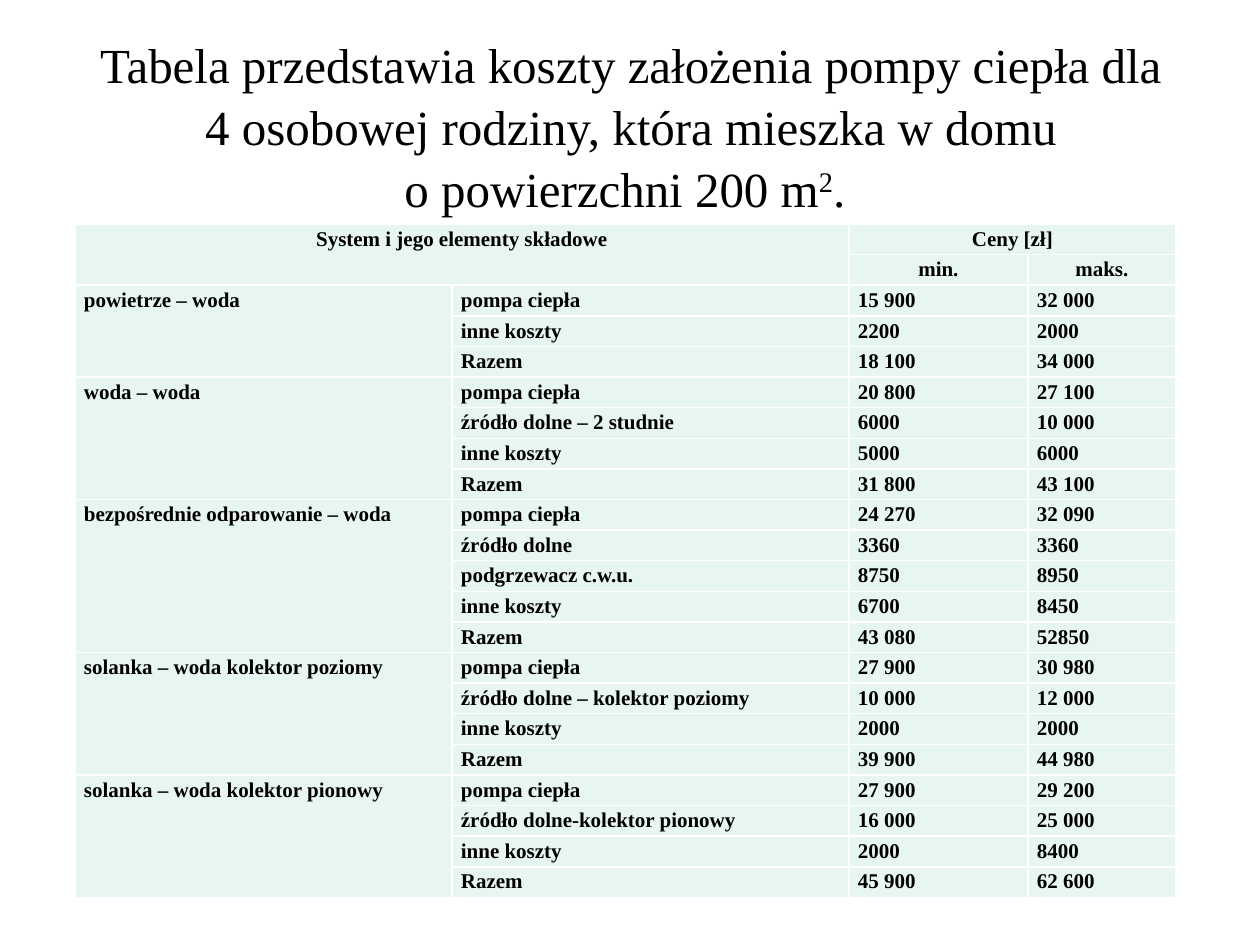
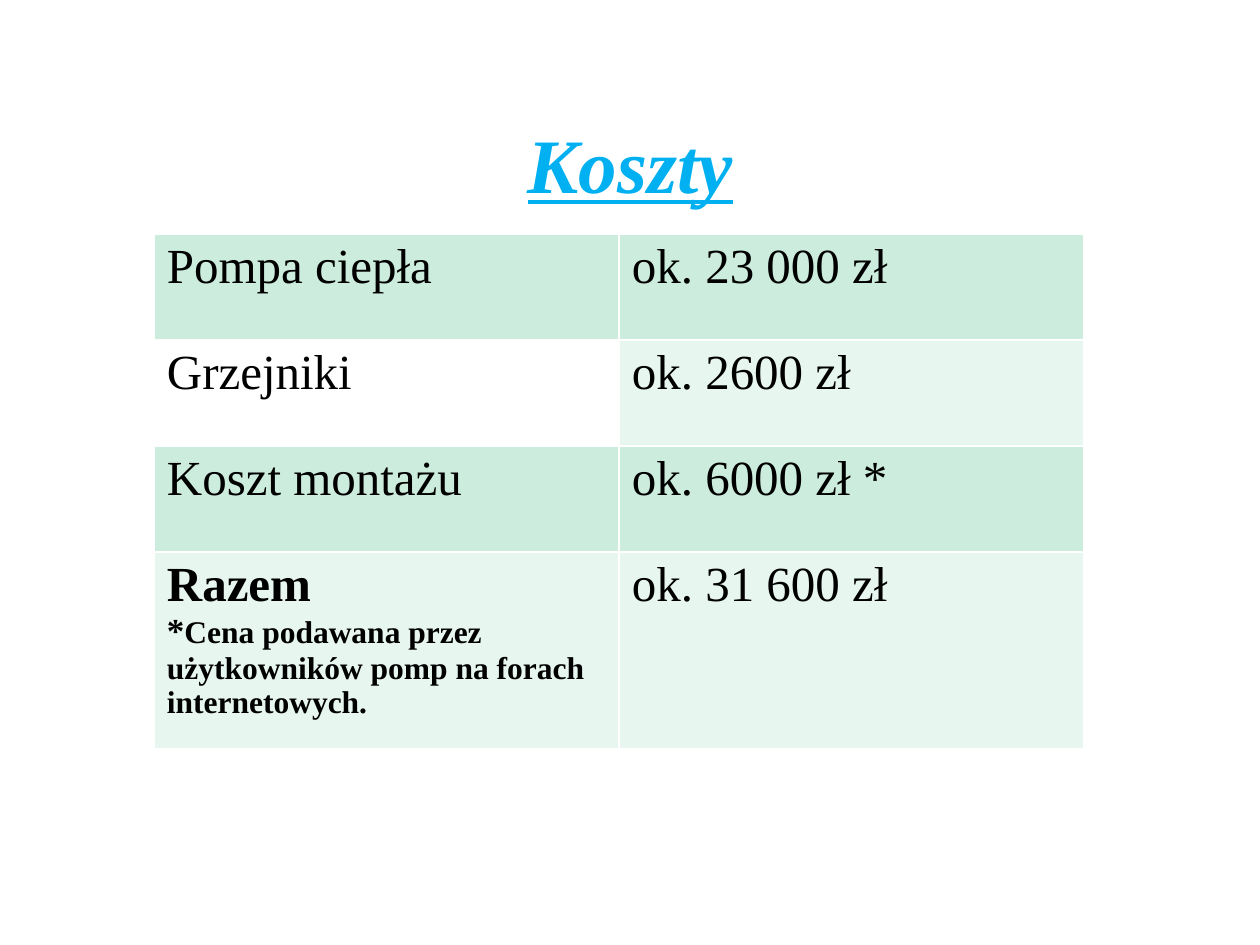
from lxml import etree
from pptx import Presentation
from pptx.dml.color import RGBColor
from pptx.enum.text import MSO_ANCHOR, PP_ALIGN
from pptx.oxml.ns import qn
from pptx.util import Emu, Pt

CENTER, LEFT = PP_ALIGN.CENTER, PP_ALIGN.LEFT
MIDDLE = MSO_ANCHOR.MIDDLE
FACE = "Times New Roman"
BLACK, WHITE, BLUE = "000000", "FFFFFF", "00B0F0"
PALE, MINT = "E7F6EF", "CCECDE"
BLANK = 6

HEADING = ("Tabela przedstawia koszty założenia pompy ciepła dla\n"
           "4 osobowej rodziny, która mieszka w domu\n"
           "o powierzchni 200 m")
SYSTEMS = [
    ("powietrze – woda", [
        ("pompa ciepła", "15 900", "32 000"),
        ("inne koszty", "2200", "2000"),
        ("Razem", "18 100", "34 000")]),
    ("woda – woda", [
        ("pompa ciepła", "20 800", "27 100"),
        ("źródło dolne – 2 studnie", "6000", "10 000"),
        ("inne koszty", "5000", "6000"),
        ("Razem", "31 800", "43 100")]),
    ("bezpośrednie odparowanie – woda", [
        ("pompa ciepła", "24 270", "32 090"),
        ("źródło dolne", "3360", "3360"),
        ("podgrzewacz c.w.u.", "8750", "8950"),
        ("inne koszty", "6700", "8450"),
        ("Razem", "43 080", "52850")]),
    ("solanka – woda kolektor poziomy", [
        ("pompa ciepła", "27 900", "30 980"),
        ("źródło dolne – kolektor poziomy", "10 000", "12 000"),
        ("inne koszty", "2000", "2000"),
        ("Razem", "39 900", "44 980")]),
    ("solanka – woda kolektor pionowy", [
        ("pompa ciepła", "27 900", "29 200"),
        ("źródło dolne-kolektor pionowy", "16 000", "25 000"),
        ("inne koszty", "2000", "8400"),
        ("Razem", "45 900", "62 600")]),
]
COSTS = [
    ("Pompa ciepła", "ok. 23 000 zł", MINT, MINT),
    ("Grzejniki", "ok. 2600 zł", WHITE, PALE),
    ("Koszt montażu", "ok. 6000 zł *", MINT, MINT),
    ("Razem", "ok. 31 600 zł", PALE, PALE),
]
NOTE = "Cena podawana przez użytkowników pomp na forach internetowych."


def px(n):
    return Emu(round(n * 914400 / 126))


def color(code):
    return RGBColor.from_string(code)


def write(para, text, size, hue=BLACK, raised=False, **style):
    """Add text to a paragraph, with a line break at each newline."""
    for i, line in enumerate(text.split("\n")):
        if i:
            para.add_line_break()
        run = para.add_run()
        run.text = line
        look = {"name": FACE, "size": Pt(size), **style}
        for key, value in look.items():
            setattr(run.font, key, value)
        run.font.color.rgb = color(hue)
        if raised:
            run.font._element.set("baseline", "30000")


def add_title(slide, box):
    """Add a centred title box and return its paragraph."""
    frame = slide.shapes.add_textbox(*map(px, box)).text_frame
    frame.word_wrap = True
    frame.vertical_anchor = MIDDLE
    para = frame.paragraphs[0]
    para.alignment = CENTER
    return para


def add_grid(slide, left, top, cols, rows):
    """Add a plain table with the given column widths and row heights."""
    grid = slide.shapes.add_table(
        len(rows), len(cols), px(left), px(top),
        px(sum(cols)), px(sum(rows))).table
    grid.first_row = grid.horz_banding = False
    for col, width in zip(grid.columns, cols):
        col.width = px(width)
    for row, height in zip(grid.rows, rows):
        row.height = px(height)
    return grid


def style_cell(cell, fill, side, edge):
    """Set fill, insets and thin white borders."""
    cell.fill.solid()
    cell.fill.fore_color.rgb = color(fill)
    cell.margin_left = cell.margin_right = px(side)
    cell.margin_top = cell.margin_bottom = px(edge)
    props = cell._tc.get_or_add_tcPr()
    for i, name in enumerate(("a:lnL", "a:lnR", "a:lnT", "a:lnB")):
        line = etree.Element(qn(name), w=str(Pt(1)))
        paint = etree.SubElement(line, qn("a:solidFill"))
        etree.SubElement(paint, qn("a:srgbClr"), val=WHITE)
        props.insert(i, line)


def price_table(slide, left, top, cols, height):
    count = 2 + sum(len(parts) for _, parts in SYSTEMS)
    grid = add_grid(slide, left, top, cols, [height / count] * count)
    for cell in grid.iter_cells():
        style_cell(cell, PALE, 9, 0)

    def put(row, col, text, align=LEFT):
        para = grid.cell(row, col).text_frame.paragraphs[0]
        para.alignment = align
        para.line_spacing = 1.15
        write(para, text, 12, bold=True)

    def merge(row, col, down, over):
        grid.cell(row, col).merge(grid.cell(row + down - 1, col + over - 1))

    merge(0, 0, 2, 2)
    merge(0, 2, 1, 2)
    heads = [(0, 0, "System i jego elementy składowe"),
             (0, 2, "Ceny [zł]"), (1, 2, "min."), (1, 3, "maks.")]
    for row, col, text in heads:
        put(row, col, text, CENTER)
    row = 2
    for system, parts in SYSTEMS:
        merge(row, 0, len(parts), 1)
        put(row, 0, system)
        for part in parts:
            for col, text in enumerate(part, 1):
                put(row, col, text)
            row += 1


def cost_table(slide, left, top, cols, rows):
    grid = add_grid(slide, left, top, cols, rows)
    for r, (item, price, *fills) in enumerate(COSTS):
        for c, text in enumerate((item, price)):
            cell = grid.cell(r, c)
            style_cell(cell, fills[c], 13, 6)
            write(cell.text_frame.paragraphs[0], text, 28,
                  bold=text == "Razem")
    note = grid.cell(len(COSTS) - 1, 0).text_frame.add_paragraph()
    write(note, "*", 20, bold=True)
    write(note, NOTE, 18, bold=True)


def price_slide(slide):
    title = add_title(slide, (64, 35, 1134, 179))
    title.line_spacing = 1.05
    write(title, HEADING, 28)
    write(title, "2", 28, raised=True)
    write(title, ". ", 28)
    price_table(slide, 75, 224, (377, 397, 179, 148), 674)


def cost_slide(slide):
    title = add_title(slide, (95, 84, 1071, 158))
    write(title, "Koszty", 44, BLUE, bold=True, italic=True, underline=True)
    cost_table(slide, 154, 234, (465, 465), (106, 106, 106, 197))


def main():
    deck = Presentation()
    deck.slide_width, deck.slide_height = px(1260), px(945)
    for build in (price_slide, cost_slide):
        build(deck.slides.add_slide(deck.slide_layouts[BLANK]))
    deck.save("out.pptx")


if __name__ == "__main__":
    main()
